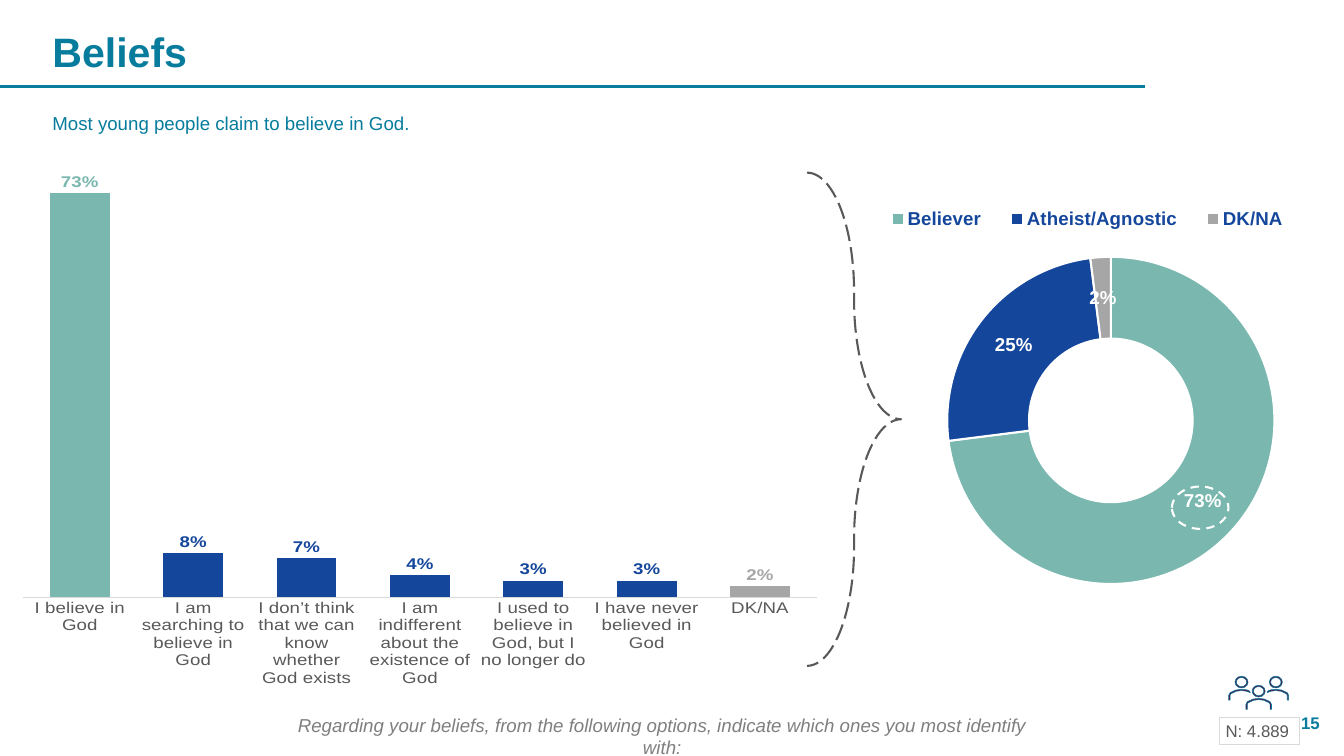
from dataclasses import dataclass

from lxml import etree
from pptx import Presentation
from pptx.chart.data import CategoryChartData
from pptx.dml.color import RGBColor
from pptx.enum.chart import XL_CHART_TYPE, XL_LABEL_POSITION, XL_LEGEND_POSITION, XL_TICK_MARK
from pptx.enum.dml import MSO_LINE
from pptx.enum.shapes import MSO_CONNECTOR, MSO_SHAPE
from pptx.enum.text import MSO_ANCHOR, PP_ALIGN
from pptx.oxml.ns import qn
from pptx.util import Pt


@dataclass(frozen=True)
class Theme:
    font: str = "Arial"
    teal: str = "077C9C"
    mint: str = "7AB8AF"
    blue: str = "14469C"
    silver: str = "A6A6A6"
    plum: str = "660039"
    text: str = "595959"
    muted: str = "7F7F7F"
    rule: str = "D9D9D9"
    white: str = "FFFFFF"
    title: int = 44
    body: int = 20
    small: int = 18


def rgb(value):
    return RGBColor.from_string(value)


def box(*lengths):
    return [Pt(v) for v in lengths]


class Deck:
    def __init__(self, prs, theme):
        self.t = theme
        self.s = prs.slides.add_slide(prs.slide_layouts[5])

    def style_font(self, font, size, color, bold=False, italic=False):
        font.name, font.size = self.t.font, Pt(size)
        font.bold, font.italic = bold, italic
        font.color.rgb = rgb(color)

    def set_text(self, sp, text, size, color, align=PP_ALIGN.LEFT,
                 anchor=MSO_ANCHOR.TOP, **style):
        tf = sp.text_frame
        tf.text = text
        tf.word_wrap = True
        tf.vertical_anchor = anchor
        p = tf.paragraphs[0]
        p.alignment = align
        self.style_font(p.runs[0].font, size, color, **style)

    def title(self, text, *at):
        sp = self.s.shapes.title
        sp.left, sp.top, sp.width, sp.height = box(*at)
        self.set_text(sp, text, self.t.title, self.t.teal, anchor=MSO_ANCHOR.MIDDLE, bold=True)

    def text(self, text, at, size, color, **style):
        self.set_text(self.s.shapes.add_textbox(*box(*at)), text, size, color, **style)

    def line(self, x1, y1, x2, y2, color, width):
        ln = self.s.shapes.add_connector(MSO_CONNECTOR.STRAIGHT, *box(x1, y1, x2, y2))
        ln.line.color.rgb, ln.line.width = rgb(color), Pt(width)
        etree.SubElement(ln._element.spPr, qn("a:effectLst"))

    def paint(self, sp, fill, line, width, dash=None):
        sp.shadow.inherit = False
        if fill:
            sp.fill.solid()
            sp.fill.fore_color.rgb = rgb(fill)
        else:
            sp.fill.background()
        sp.line.color.rgb, sp.line.width = rgb(line), Pt(width)
        if dash:
            sp.line.dash_style = dash
        return sp

    def shape(self, kind, at, fill, line, width, dash=None, adj=()):
        sp = self.s.shapes.add_shape(kind, *box(*at))
        for i, value in enumerate(adj):
            sp.adjustments[i] = value
        return self.paint(sp, fill, line, width, dash)

    def outline(self, points, fill, line, width):
        pts = [tuple(box(*pt)) for pt in points]
        fb = self.s.shapes.build_freeform(*pts[0])
        fb.add_line_segments(pts[1:], close=True)
        self.paint(fb.convert_to_shape(), fill, line, width)

    def person(self, cx, top, body):
        """Head ring centred on cx, with the shoulder outline below it."""
        style = (self.t.plum, self.t.teal, 0.59)
        self.shape(MSO_SHAPE.DONUT, (cx - 7, top, 14, 12.6), *style, adj=(0.11,))
        self.outline([(cx + x, top + 14 + y) for x, y in body], *style)

    def chart(self, kind, at, values, colors, layout):
        data = CategoryChartData(number_format="0%")
        data.categories = list(values)
        data.add_series("Series 1", list(values.values()))
        chart = self.s.shapes.add_chart(kind, *box(*at), data).chart
        chart.has_title = chart.has_legend = False
        self.style_font(chart.font, self.t.body, self.t.text)
        plot = chart.plots[0]
        plot.vary_by_categories = False
        for i, color in enumerate(colors):
            fill = plot.series[0].points[i].format.fill
            fill.solid()
            fill.fore_color.rgb = rgb(color)
        area = chart._chartSpace.chart.plotArea
        for old in area.findall(qn("c:layout")):
            area.remove(old)
        area.insert(0, self.layout(*layout, inner=True))
        return chart

    def layout(self, x, y, w, h, inner=False):
        root = etree.Element(qn("c:layout"))
        manual = etree.SubElement(root, qn("c:manualLayout"))
        pairs = [("layoutTarget", "inner")] if inner else []
        pairs += [("xMode", "edge"), ("yMode", "edge"), ("x", x), ("y", y), ("w", w), ("h", h)]
        for tag, value in pairs:
            etree.SubElement(manual, qn(f"c:{tag}")).set("val", str(value))
        return root

    def columns(self, at, values, colors):
        chart = self.chart(XL_CHART_TYPE.COLUMN_CLUSTERED, at, values, colors, (0, 0, 1, 1))
        chart.plots[0].gap_width = 90
        for i, color in enumerate(colors):
            label = chart.plots[0].series[0].points[i].data_label
            self.style_font(label.font, self.t.body, color, bold=True)
            label.position = XL_LABEL_POSITION.OUTSIDE_END
        val, cat = chart.value_axis, chart.category_axis
        val.visible = val.has_major_gridlines = False
        val.minimum_scale, val.maximum_scale = 0, 0.8
        cat.major_tick_mark = XL_TICK_MARK.NONE
        cat.format.line.color.rgb, cat.format.line.width = rgb(self.t.rule), Pt(0.75)
        self.style_font(cat.tick_labels.font, self.t.body, self.t.text)

    def doughnut(self, at, values, colors):
        chart = self.chart(XL_CHART_TYPE.DOUGHNUT, at, values, colors, (0.13, 0.16, 0.84, 0.74))
        plot = chart.plots[0]
        plot.vary_by_categories = True
        for i in range(len(colors)):
            edge = plot.series[0].points[i].format.line
            edge.color.rgb, edge.width = rgb(self.t.white), Pt(2.25)
        labels = plot.series[0].data_labels
        labels.show_value, labels.show_percentage = True, False
        labels.number_format, labels.number_format_is_linked = "0%", False
        self.style_font(labels.font, self.t.body, self.t.white, bold=True)
        chart.has_legend = True
        chart.legend.position = XL_LEGEND_POSITION.RIGHT
        chart.legend.include_in_layout = False
        self.style_font(chart.legend.font, self.t.body, self.t.blue, bold=True)
        pos = chart.legend._element.find(qn("c:legendPos"))
        pos.addnext(self.layout(0.03, 0.03, 0.94, 0.09))


def main():
    prs = Presentation()
    prs.slide_width, prs.slide_height = Pt(1440), Pt(810)
    t = Theme()
    d = Deck(prs, t)

    # Heading, page number and survey question
    d.line(0, 93, 1227, 93, t.teal, 3)
    d.title("Beliefs", 49, 13, 1187, 83)
    d.text("15", (1253, 759.5, 168, 29), t.small, t.teal,
           align=PP_ALIGN.RIGHT, anchor=MSO_ANCHOR.MIDDLE, bold=True)
    d.text("Regarding your beliefs, from the following options, indicate which ones "
           "you most identify with:", (289.5, 761, 840, 32), t.body, t.muted,
           align=PP_ALIGN.CENTER, italic=True)

    # Answers, then their grouping
    answers = {"I believe in God": 0.73, "I am searching to believe in God": 0.08,
               "I don’t think that we can know whether God exists": 0.07,
               "I am indifferent about the existence of God": 0.04,
               "I used to believe in God, but I no longer do": 0.03,
               "I have never believed in God": 0.03, "DK/NA": 0.02}
    d.columns((24.5, 165.6, 851, 570.2), answers, [t.mint] + [t.blue] * 5 + [t.silver])
    groups = {"Believer": 0.73, "Atheist/Agnostic": 0.25, "DK/NA": 0.02}
    d.doughnut((915, 199.4, 500.4, 473.8), groups, [t.mint, t.blue, t.silver])
    d.shape(MSO_SHAPE.RIGHT_BRACE, (864.7, 185, 100.8, 528.5), None, t.text, 2.25,
            MSO_LINE.LONG_DASH, adj=(1.265, 0.5))
    d.text("Most young people claim to believe in God.", (49, 116.6, 1322.6, 32),
           t.body, t.teal)

    # Group of people: side figures mirror each other, the middle one is whole
    outer = [(-13.7, 11.7), (-13.7, 6.5), (-12.2, 3.6), (-6, 0.8), (0, 0)]
    inner = [(0, 1.4), (-5.5, 2.1), (-11.3, 4.8), (-12.2, 6.5), (-12.2, 11.7)]

    def mirror(points):
        return [(-x, y) for x, y in points]

    side = outer + [(5.6, 0.6), (8.6, 1.8), (9.4, 3.6), (5, 2)] + inner
    whole = outer + mirror(outer[-2::-1]) + mirror(inner[::-1]) + inner[1:]
    d.person(1330.2, 724.5, side)
    d.person(1367, 724.5, mirror(side))
    d.person(1348.6, 734.2, whole)

    # Sample size and highlighted share
    sp = d.shape(MSO_SHAPE.RECTANGLE, (1306, 769, 85.7, 28.8), t.white, t.rule, 0.5)
    d.set_text(sp, "N: 4.889", t.small, t.text, anchor=MSO_ANCHOR.MIDDLE)
    d.shape(MSO_SHAPE.OVAL, (1255.7, 521.3, 60.5, 45.4), None, t.white, 2.25, MSO_LINE.DASH)

    prs.save("out.pptx")


if __name__ == "__main__":
    main()
